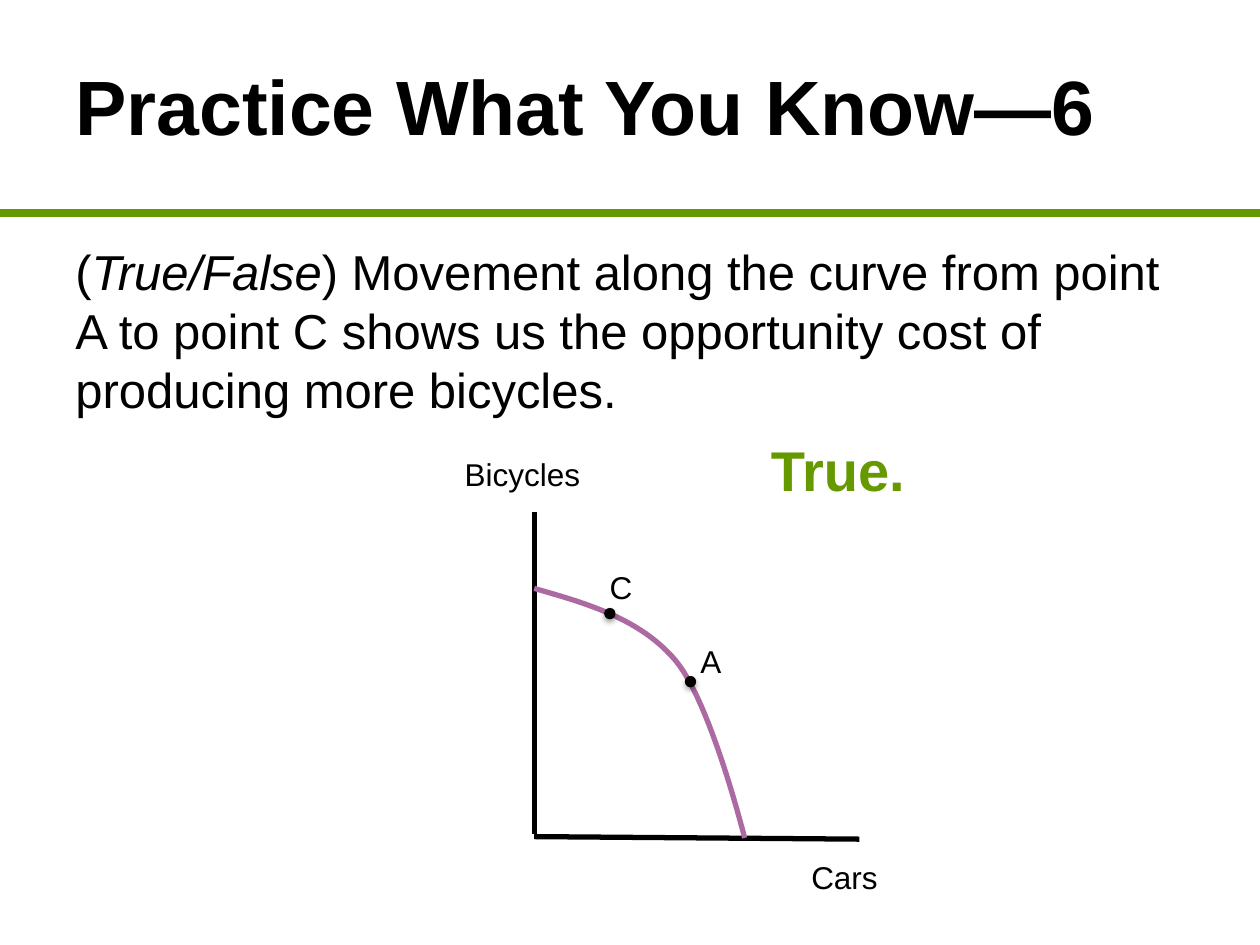
"""Build a practice slide with a production possibilities curve."""
from lxml.etree import SubElement
from pptx import Presentation
from pptx.dml.color import RGBColor
from pptx.enum.shapes import MSO_CONNECTOR, MSO_SHAPE
from pptx.enum.text import MSO_ANCHOR
from pptx.oxml.ns import qn
from pptx.util import Inches, Pt

BLACK = RGBColor(0x00, 0x00, 0x00)
GREEN = RGBColor(0x66, 0x99, 0x00)
PURPLE = RGBColor(0xAC, 0x69, 0xA2)
FONT = "Arial"
WIDTH, HEIGHT = 10, 7.5
MARGIN = WIDTH / 20
CONTENT_WIDTH = WIDTH - 2 * MARGIN
RULE_Y = 1.69

TITLE = "Practice What You Know—6"
QUESTION = [
    ("(", False),
    ("True/False", True),
    (") Movement along the curve from point A to point C shows us the "
     "opportunity cost of producing more bicycles.", False),
]
ANSWER = "True."
LABELS = [
    ("Bicycles", (3.59, 3.56, 1.4, 0.4)),
    ("Cars", (6.34, 6.76, 0.82, 0.4)),
    ("A", (5.46, 5.05, 0.5, 0.5)),
    ("C", (4.74, 4.46, 0.51, 0.51)),
]
LINES = [
    ((0, RULE_Y), (WIDTH, RULE_Y), GREEN, 4.5),
    ((4.24, 4.06), (4.24, 6.62), BLACK, 3),
    ((6.82, 6.66), (4.24, 6.64), BLACK, 3),
]
CURVE = [
    ((4.24, 4.67), (4.66, 4.79), (5.08, 4.91), (5.36, 5.24)),
    ((5.36, 5.24), (5.64, 5.57), (5.91, 6.65), (5.91, 6.65)),
]
CURVE_STEPS = 24
DOT_SIZE = 0.08
DOTS = [(4.84, 4.87), (5.48, 5.41)]


def add_text(page, text, area, size=18, color=BLACK, bold=False,
             anchor=MSO_ANCHOR.TOP):
    """Add a text box from a string or a list of (text, italic) spans."""
    box = page.shapes.add_textbox(*map(Inches, area))
    frame = box.text_frame
    frame.word_wrap = True
    frame.vertical_anchor = anchor
    paragraph = frame.paragraphs[0]
    spans = [(text, False)] if isinstance(text, str) else text
    for words, italic in spans:
        span = paragraph.add_run()
        span.text = words
        span.font.name = FONT
        span.font.size = Pt(size)
        span.font.bold = bold
        span.font.italic = italic
        span.font.color.rgb = color


def add_line(page, start, end, color, width):
    """Add a straight line without a shadow."""
    line = page.shapes.add_connector(
        MSO_CONNECTOR.STRAIGHT, *map(Inches, start + end))
    line.line.color.rgb = color
    line.line.width = Pt(width)
    SubElement(line._element.spPr, qn("a:effectLst"))


def bezier_point(points, share):
    """Return the point at a share of a cubic curve."""
    rest = 1 - share
    weights = (rest ** 3, 3 * rest ** 2 * share,
               3 * rest * share ** 2, share ** 3)
    return tuple(Inches(sum(weight * value for weight, value in zip(weights, axis)))
                 for axis in zip(*points))


def add_curve(page):
    """Draw the production possibilities curve as an open outline."""
    start = bezier_point(CURVE[0], 0)
    points = [bezier_point(segment, step / CURVE_STEPS)
              for segment in CURVE for step in range(1, CURVE_STEPS + 1)]
    builder = page.shapes.build_freeform(*start)
    builder.add_line_segments(points, close=False)
    curve = builder.convert_to_shape()
    curve.shadow.inherit = False
    curve.fill.background()
    curve.line.color.rgb = PURPLE
    curve.line.width = Pt(3)


def add_dot(page, center):
    """Mark a point on the curve with a softly shadowed dot."""
    left, top = (value - DOT_SIZE / 2 for value in center)
    dot = page.shapes.add_shape(
        MSO_SHAPE.OVAL, *map(Inches, (left, top, DOT_SIZE, DOT_SIZE)))
    dot.fill.solid()
    dot.fill.fore_color.rgb = BLACK
    dot.line.color.rgb = BLACK
    dot.line.width = Pt(0.75)
    dot.shadow.inherit = False
    effects = dot._element.spPr.find(qn("a:effectLst"))
    shadow = SubElement(effects, qn("a:outerShdw"), blurRad=str(Pt(3.1)),
                        dist=str(Pt(1.8)), dir="5400000", rotWithShape="0")
    color = SubElement(shadow, qn("a:srgbClr"), val=str(BLACK))
    SubElement(color, qn("a:alpha"), val="35000")


def main():
    """Assemble and save the slide."""
    deck = Presentation()
    deck.slide_width, deck.slide_height = Inches(WIDTH), Inches(HEIGHT)
    page = deck.slides.add_slide(deck.slide_layouts[6])
    for line in LINES:
        add_line(page, *line)
    add_text(page, ANSWER, (6.02, 3.41, 3.72, 0.64),
             size=32, color=GREEN, bold=True)
    for text, area in LABELS:
        add_text(page, text, area)
    add_curve(page)
    for center in DOTS:
        add_dot(page, center)
    add_text(page, QUESTION, (MARGIN, 1.87, CONTENT_WIDTH, 1.59), size=28)
    add_text(page, TITLE, (MARGIN, 0, CONTENT_WIDTH, 1.67),
             size=44, bold=True, anchor=MSO_ANCHOR.MIDDLE)
    deck.save("out.pptx")


if __name__ == "__main__":
    main()
